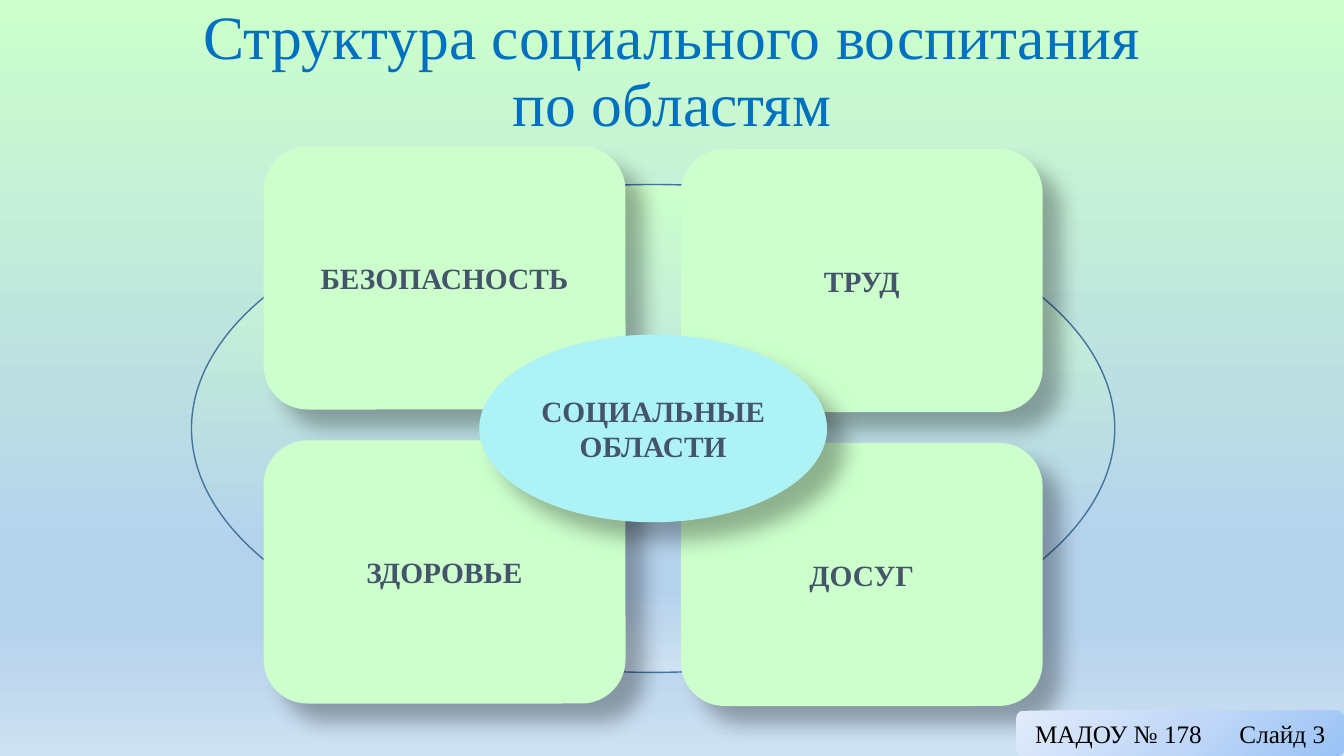
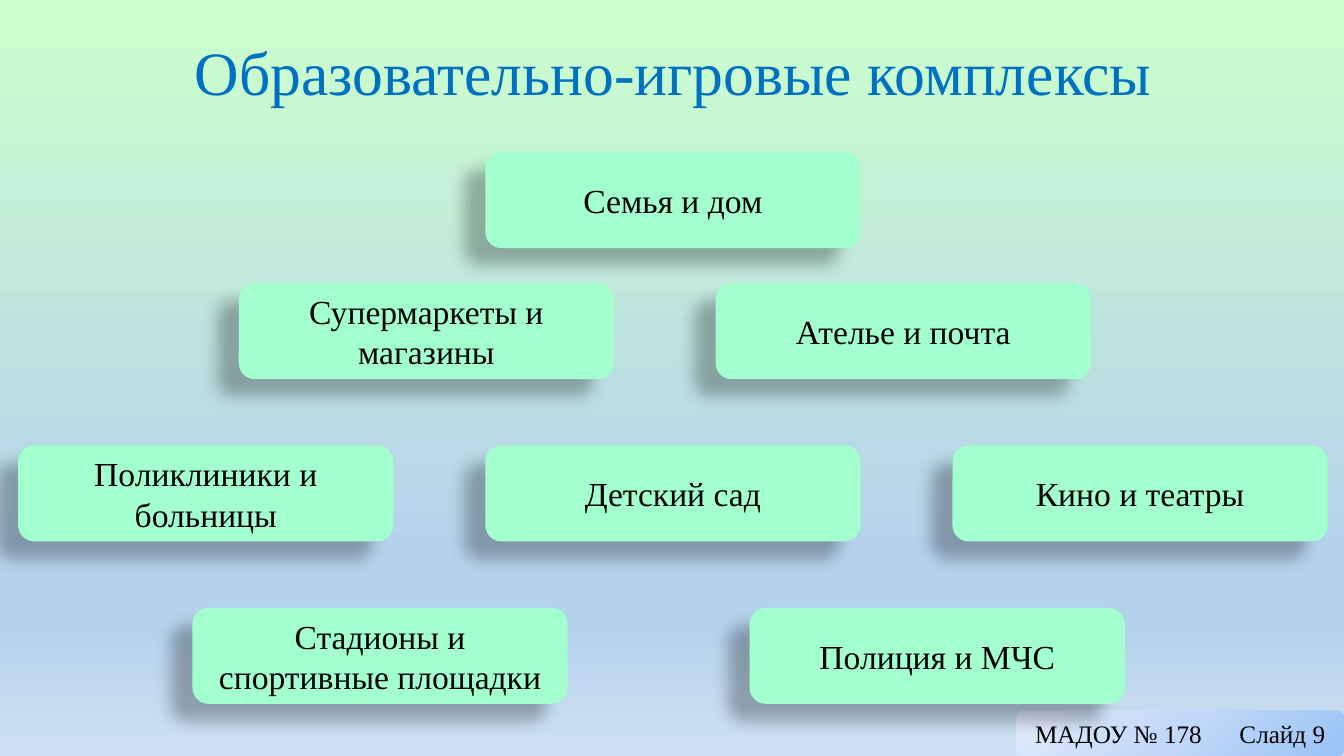
"""Build two slides on the areas of social education."""
from dataclasses import dataclass

from lxml import etree
from pptx import Presentation
from pptx.dml.color import RGBColor
from pptx.enum.shapes import MSO_SHAPE
from pptx.enum.text import MSO_ANCHOR, MSO_AUTO_SIZE, PP_ALIGN
from pptx.oxml.ns import qn
from pptx.util import Pt

ROUNDED, OVAL = MSO_SHAPE.ROUNDED_RECTANGLE, MSO_SHAPE.OVAL
CENTER, LEFT = PP_ALIGN.CENTER, PP_ALIGN.LEFT
MIDDLE = MSO_ANCHOR.MIDDLE
NO_AUTOFIT = MSO_AUTO_SIZE.NONE
TITLE_ONLY = 5


@dataclass(frozen=True)
class Theme:
    """Hold the colours, type sizes and effects of the deck."""
    font: str = "Times New Roman"
    title: str = "0070C0"
    ink: str = "000000"
    slate: str = "44546A"
    domain: str = "CCFFCC"
    hub: str = "ADF2F5"
    complex: str = "A3FFCD"
    ring: str = "43739E"
    title_size: int = 44
    complex_size: int = 24
    domain_size: int = 21
    footer_size: int = 18
    sky: tuple = ((0, "CCFFCC"), (74, "B5D2EC"), (83, "B5D2EC"), (100, "CEE1F2"))
    band: tuple = ((0, "9AC3F5"), (50, "C2D8F8"), (100, "E1EBFB"))
    domain_shadow: tuple = (30, 15, 18, 45)
    complex_shadow: tuple = (28, 11.8, 19.7, 141)


THEME = Theme()
SLIDE_SIZE = (960, 540)
FOOTER_BOX = (725.8, 507.6, 234.2, 32.4)
FOOTER_INSET, FOOTER_TAB = 12, 146
RING_BOX = (136.8, 131.8, 659.5, 348.5)
DOMAIN_SIZE, DOMAIN_PITCH, HUB_SIZE = (258.5, 188), (298, 210), (248.4, 134)
DOMAIN_COLUMNS = ((-2.5, ("БЕЗОПАСНОСТЬ", "ЗДОРОВЬЕ")), (-0.7, ("ТРУД", "ДОСУГ")))
COMPLEX_BOX = (13, 108.7, 935.4, 394)
COMPLEX_SIZE = (268, 68.5)
COMPLEX_ROWS = (
    (0, 0, 0, ("Семья и дом",)),
    (93.6, -5.8, 340.6, ("Супермаркеты и магазины", "Ателье и почта")),
    (209.5, 0, 333.7, ("Поликлиники и больницы", "Детский сад", "Кино и театры")),
    (325.5, -10.2, 398, ("Стадионы и спортивные площадки", "Полиция и МЧС")),
)


def apply(target, formats):
    """Set each named attribute of the target."""
    for name, value in formats.items():
        setattr(target, name, value)


def place(part, box):
    """Move and size a part to a box in points."""
    apply(part, dict(zip(("left", "top", "width", "height"), map(Pt, box))))


def centred(cx, cy, size):
    """Return the box of the given size around a centre."""
    width, height = size
    return cx - width / 2, cy - height / 2, width, height


def add_colour(parent, colour):
    """Append an RGB colour element and return it."""
    return etree.SubElement(parent, qn("a:srgbClr"), val=colour)


def paint_gradient(properties, stops, corner=False):
    """Replace an empty fill by a vertical or a corner gradient."""
    gradient = etree.Element(qn("a:gradFill"), rotWithShape="1")
    stop_list = etree.SubElement(gradient, qn("a:gsLst"))
    for position, colour in stops:
        add_colour(etree.SubElement(stop_list, qn("a:gs"), pos=str(position * 1000)), colour)
    if corner:
        course = etree.SubElement(gradient, qn("a:path"))
        course.set("path", "circle")
        etree.SubElement(course, qn("a:fillToRect"), l="100000", t="100000")
    else:
        etree.SubElement(gradient, qn("a:lin"), ang="5400000", scaled="0")
    properties.replace(properties.find(qn("a:noFill")), gradient)


def cast_shadow(shape, shadow):
    """Give a shape a soft outer shadow."""
    alpha, blur, distance, angle = shadow
    effects = shape.element.spPr.find(qn("a:effectLst"))
    outer = etree.SubElement(
        effects, qn("a:outerShdw"), blurRad=str(Pt(blur)), dist=str(Pt(distance)),
        dir=str(angle * 60000), algn="ctr", rotWithShape="0")
    etree.SubElement(add_colour(outer, THEME.ink), qn("a:alpha"), val=str(alpha * 1000))


def write(part, text, size, colour, bold=False, align=CENTER):
    """Write one formatted paragraph, centred vertically."""
    frame = part.text_frame
    apply(frame, {"word_wrap": True, "vertical_anchor": MIDDLE, "auto_size": NO_AUTOFIT})
    paragraph = frame.paragraphs[0]
    apply(paragraph, {"text": text, "alignment": align})
    for run in paragraph.runs:
        apply(run.font, {"name": THEME.font, "size": Pt(size), "bold": bold})
        run.font.color.rgb = RGBColor.from_string(colour)
    return paragraph


def add_panel(slide, kind, box, colour=None, shadow=None):
    """Add a borderless shape, filled when a colour is given."""
    panel = slide.shapes.add_shape(kind, *map(Pt, box))
    panel.shadow.inherit = False
    panel.line.fill.background()
    if colour:
        panel.fill.solid()
        panel.fill.fore_color.rgb = RGBColor.from_string(colour)
    else:
        panel.fill.background()
    if shadow:
        cast_shadow(panel, shadow)
    return panel


def add_footer(slide, box, number):
    """Add the corner band with the organisation and slide number."""
    band = add_panel(slide, ROUNDED, box)
    paint_gradient(band.element.spPr, THEME.band, corner=True)
    apply(band.text_frame, {"margin_left": Pt(FOOTER_INSET), "margin_right": 0})
    line = write(band, f"МАДОУ № 178\tСлайд {number}", THEME.footer_size, THEME.ink, align=LEFT)
    tabs = etree.SubElement(line._p.get_or_add_pPr(), qn("a:tabLst"))
    etree.SubElement(tabs, qn("a:tab"), pos=str(Pt(FOOTER_TAB)), algn="l")


def add_titled_slide(deck, title, box):
    """Add a slide with its title placed in the box."""
    slide = deck.slides.add_slide(deck.slide_layouts[TITLE_ONLY])
    heading = slide.shapes.title
    place(heading, box)
    write(heading, title, THEME.title_size, THEME.title).line_spacing = 0.9
    return slide


def add_domain(slide, kind, box, label, colour):
    """Add one labelled shape of the domain diagram."""
    domain = add_panel(slide, kind, box, colour, THEME.domain_shadow)
    apply(domain.text_frame, {"margin_left": 0, "margin_right": 0})
    write(domain, label, THEME.domain_size, THEME.slate, bold=True)


def add_domain_diagram(slide, box):
    """Place four domains and a hub around the centre of the ring box."""
    left, top, width, height = box
    cx, cy = left + width / 2, top + height / 2
    ring = add_panel(slide, OVAL, box)
    paint_gradient(ring.element.spPr, THEME.sky)
    ring.line.color.rgb = RGBColor.from_string(THEME.ring)
    ring.line.width = Pt(1)
    across, down = DOMAIN_PITCH
    for column, (shift, labels) in enumerate(DOMAIN_COLUMNS):
        for row, label in enumerate(labels):
            spot = centred(cx + (column - 0.5) * across,
                           cy + shift + (row - 0.5) * down, DOMAIN_SIZE)
            add_domain(slide, ROUNDED, spot, label, THEME.domain)
    add_domain(slide, OVAL, centred(cx, cy, HUB_SIZE), "СОЦИАЛЬНЫЕ ОБЛАСТИ", THEME.hub)


def add_complexes(slide, box):
    """Place rows of play complexes, each spaced evenly about its centre."""
    left, top, width, _ = box
    for offset, shift, pitch, labels in COMPLEX_ROWS:
        for index, label in enumerate(labels):
            cx = left + width / 2 + shift + (index - (len(labels) - 1) / 2) * pitch
            spot = centred(cx, top + offset + COMPLEX_SIZE[1] / 2, COMPLEX_SIZE)
            card = add_panel(slide, ROUNDED, spot, THEME.complex, THEME.complex_shadow)
            write(card, label, THEME.complex_size, THEME.ink)


def main():
    """Build and save the deck."""
    deck = Presentation()
    apply(deck, dict(zip(("slide_width", "slide_height"), map(Pt, SLIDE_SIZE))))
    master = deck.slide_master
    master.background.fill.background()
    paint_gradient(master.element.cSld.find(qn("p:bg")).find(qn("p:bgPr")), THEME.sky)

    areas = add_titled_slide(
        deck, "Структура социального воспитания\nпо областям", (66, 0, 828, 104.4))
    add_domain_diagram(areas, RING_BOX)
    add_footer(areas, FOOTER_BOX, 3)

    complexes = add_titled_slide(deck, "Образовательно-игровые комплексы", (67, 2, 828, 104.4))
    add_footer(complexes, FOOTER_BOX, 9)
    add_complexes(complexes, COMPLEX_BOX)
    deck.save("out.pptx")


if __name__ == "__main__":
    main()
